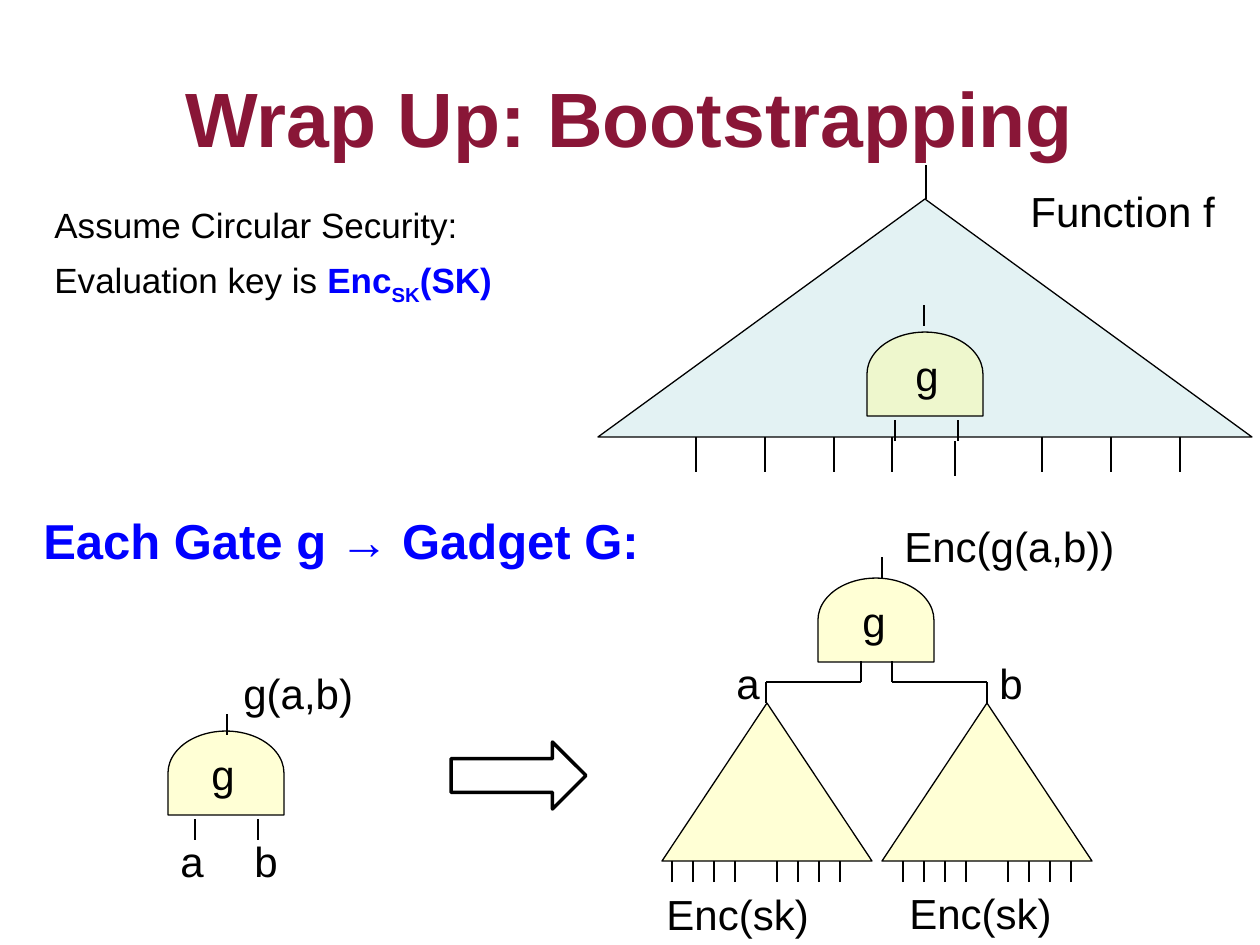
from dataclasses import dataclass

from lxml import etree
from pptx import Presentation
from pptx.dml.color import RGBColor
from pptx.enum.shapes import MSO_CONNECTOR, MSO_SHAPE
from pptx.enum.text import MSO_ANCHOR, MSO_AUTO_SIZE, PP_ALIGN
from pptx.oxml.ns import qn
from pptx.util import Emu, Pt

TRIANGLE = MSO_SHAPE.ISOSCELES_TRIANGLE
DELAY = MSO_SHAPE.FLOWCHART_DELAY
RIGHT_ARROW = MSO_SHAPE.RIGHT_ARROW
STRAIGHT = MSO_CONNECTOR.STRAIGHT
MIDDLE = MSO_ANCHOR.MIDDLE
GROW = MSO_AUTO_SIZE.SHAPE_TO_FIT_TEXT
CENTER = PP_ALIGN.CENTER
LEFT = PP_ALIGN.LEFT

PX_PER_INCH = 126
FONT = "Arial"
COLORS = {
    "ink": "000000",
    "title": "891637",
    "key": "0000FF",
    "function": "BBE0E3",
    "gadget": "FFFF99",
}
OPACITY = 41000
SUBSCRIPT = -25000
GATE_WIDTH, GATE_HEIGHT = 116, 84
TREE_WIDTH, TREE_HEIGHT, TREE_TOP = 210, 158, 703
LEAF_GAP, LEAF_SLOTS, SKIPPED_SLOT = 21, 9, 4


@dataclass(frozen=True)
class Span:
    text: str
    color: str = "ink"
    bold: bool = False
    baseline: int = 0


@dataclass(frozen=True)
class Label:
    spans: tuple[Span, ...]
    left: int
    top: int
    width: int = 105
    height: int = 63
    size: int = 24


@dataclass(frozen=True)
class Gate:
    center_x: int
    center_y: int
    label_left: int
    output: tuple[int, int]
    inputs: tuple[int, ...] = ()


@dataclass(frozen=True)
class Tree:
    left: int
    first_leaf: int


@dataclass(frozen=True)
class Wire:
    x1: int
    y1: int
    x2: int
    y2: int


TITLE = Label((Span("Wrap Up: Bootstrapping", "title", True),), 63, 38, 1134, 157, 44)
LABELS = (
    Label((Span("Assume Circular Security:"),), 42, 197, 578, 55, 20),
    Label(
        (
            Span("Evaluation key is "),
            Span("Enc", "key", True),
            Span("SK", "key", True, SUBSCRIPT),
            Span("(SK)", "key", True),
        ),
        42, 252, 578, 55, 20,
    ),
    Label((Span("Each Gate g → Gadget G:", "key", True),), 31, 504, 809, 72, 28),
    Label((Span("Function f"),), 1018, 179, 262),
    Label((Span("a"),), 168, 829),
    Label((Span("b"),), 242, 829),
    Label((Span("g(a,b)"),), 231, 661, 168),
    Label((Span("a"),), 724, 651),
    Label((Span("b"),), 987, 651),
    Label((Span("Enc(g(a,b))"),), 892, 514, 305),
    Label((Span("Enc(sk)"),), 654, 882, 236),
    Label((Span("Enc(sk)"),), 897, 881, 236),
)
GATES = (
    Gate(925, 374, 903, (924, 305), (895, 958)),
    Gate(226, 773, 199, (227, 714), (195, 258)),
    Gate(876, 620, 850, (882, 557)),
)
TREES = (Tree(662, 672), Tree(882, 903))
FUNCTION_INPUTS = (696, 765, 834, 892, 1042, 1111, 1180)
WIRES = (
    Wire(926, 199, 926, 165),
    Wire(955, 476, 955, 441),
    Wire(766, 703, 766, 682),
    Wire(987, 703, 987, 682),
    Wire(861, 682, 766, 682),
    Wire(987, 682, 892, 682),
    Wire(861, 682, 861, 661),
    Wire(892, 682, 892, 661),
)


def px(length: int) -> Emu:
    return Emu(round(length * 914400 / PX_PER_INCH))


def rgb(color: str) -> RGBColor:
    return RGBColor.from_string(COLORS[color])


def draw_shape(slide, kind, left: int, top: int, width: int, height: int,
               fill: str | None = None, line_width: float = 0.75):
    shape = slide.shapes.add_shape(kind, px(left), px(top), px(width), px(height))
    shape.shadow.inherit = False
    shape.line.color.rgb = rgb("ink")
    shape.line.width = Pt(line_width)
    if fill is None:
        shape.fill.background()
    else:
        shape.fill.solid()
        shape.fill.fore_color.rgb = rgb(fill)
        tint = shape.element.spPr.find(qn("a:solidFill")).find(qn("a:srgbClr"))
        etree.SubElement(tint, qn("a:alpha")).set("val", str(OPACITY))
    return shape


def draw_wire(slide, wire: Wire) -> None:
    line = slide.shapes.add_connector(
        STRAIGHT, px(wire.x1), px(wire.y1), px(wire.x2), px(wire.y2))
    line.line.color.rgb = rgb("ink")
    line.line.width = Pt(0.75)
    etree.SubElement(line.element.spPr, qn("a:effectLst"))


def draw_stubs(slide, xs, top: int, length: int) -> None:
    for x in xs:
        draw_wire(slide, Wire(x, top + length, x, top))


def draw_label(slide, label: Label, align=LEFT):
    box = slide.shapes.add_textbox(
        px(label.left), px(label.top), px(label.width), px(label.height))
    frame = box.text_frame
    frame.word_wrap = True
    frame.auto_size = GROW
    paragraph = frame.paragraphs[0]
    paragraph.alignment = align
    for span in label.spans:
        run = paragraph.add_run()
        run.text = span.text
        run.font.name = FONT
        run.font.size = Pt(label.size)
        run.font.bold = span.bold
        run.font.color.rgb = rgb(span.color)
        if span.baseline:
            run._r.get_or_add_rPr().set("baseline", str(span.baseline))
    return box


def draw_gate(slide, gate: Gate) -> None:
    body = draw_shape(
        slide, DELAY, gate.center_x - GATE_HEIGHT // 2, gate.center_y - GATE_WIDTH // 2,
        GATE_HEIGHT, GATE_WIDTH, "gadget")
    body.rotation = 270
    draw_label(slide, Label((Span("g"),), gate.label_left, gate.center_y - 31))
    output_x, output_top = gate.output
    draw_stubs(slide, (output_x,), output_top, 21)
    draw_stubs(slide, gate.inputs, gate.center_y + 46, 21)


def draw_tree(slide, tree: Tree) -> None:
    draw_shape(slide, TRIANGLE, tree.left, TREE_TOP, TREE_WIDTH, TREE_HEIGHT, "gadget")
    leaves = [tree.first_leaf + LEAF_GAP * slot
              for slot in range(LEAF_SLOTS) if slot != SKIPPED_SLOT]
    draw_stubs(slide, leaves, TREE_TOP + TREE_HEIGHT, 21)


def main() -> None:
    deck = Presentation()
    deck.slide_width, deck.slide_height = px(1260), px(945)
    slide = deck.slides.add_slide(deck.slide_layouts[6])

    draw_shape(slide, TRIANGLE, 598, 199, 654, 238, "function")
    draw_stubs(slide, FUNCTION_INPUTS, 437, 35)
    for tree in TREES:
        draw_tree(slide, tree)
    for gate in GATES:
        draw_gate(slide, gate)
    for wire in WIRES:
        draw_wire(slide, wire)
    draw_shape(slide, RIGHT_ARROW, 451, 742, 135, 67, line_width=2)
    for label in LABELS:
        draw_label(slide, label)
    title = draw_label(slide, TITLE, CENTER)
    title.text_frame.auto_size = MSO_AUTO_SIZE.NONE
    title.text_frame.vertical_anchor = MIDDLE

    deck.save("out.pptx")


if __name__ == "__main__":
    main()
